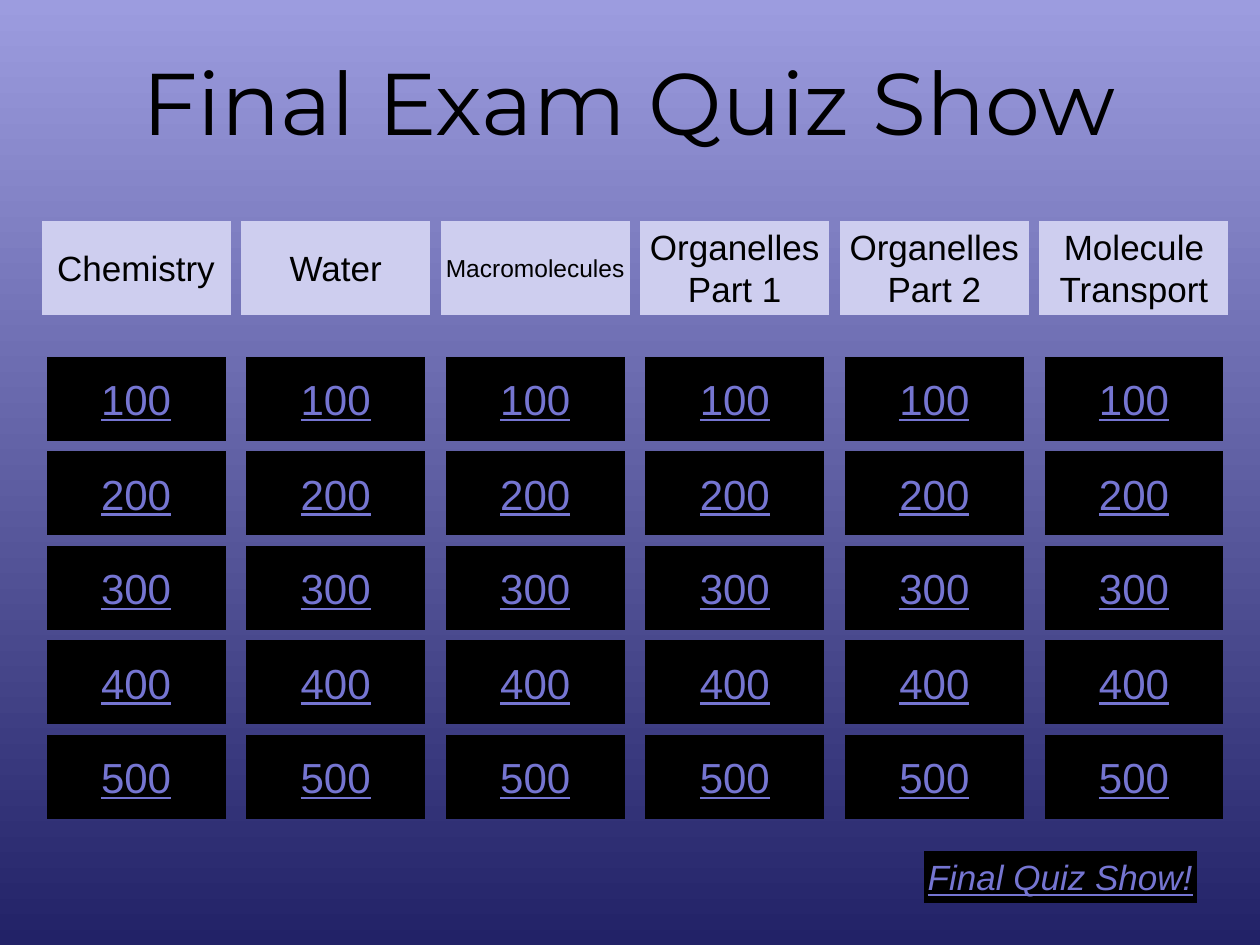
"""Build the quiz board slide with categories, point values and a final round."""
import pptx
import pptx.dml.color
import pptx.enum.shapes
import pptx.enum.text
import pptx.util
from pptx.util import Inches

TITLE = "Final Exam Quiz Show"
FINAL_ROUND = "Final Quiz Show!"
CATEGORIES = [
    "Chemistry",
    "Water",
    "Macromolecules",
    "Organelles\nPart 1",
    "Organelles\nPart 2",
    "Molecule\nTransport",
]
POINTS = [100, 200, 300, 400, 500]

THEME = {
    "title_font": "Montserrat",
    "body_font": "Arial",
    "gradient": ("9C9CDF", "222267"),
    "text": "000000",
    "link": "7575D1",
    "header_fill": "CECEEF",
    "tile_fill": "000000",
    "title_size": 50,
    "header_size": 20,
    "long_header_size": 14,
    "tile_size": 24,
    "final_size": 20,
}
LONGEST_LINE = 12

BOARD_LEFT, LAST_LEFT = 0.33, 8.25
COLUMN_PITCH = (LAST_LEFT - BOARD_LEFT) / (len(CATEGORIES) - 1)
HEADER_TOP, HEADER_WIDTH, HEADER_HEIGHT = 1.75, 1.5, 0.75
TILE_TOP, TILE_WIDTH, TILE_HEIGHT, ROW_PITCH = 2.83, 1.42, 0.67, 0.75
TILE_INDENT = (HEADER_WIDTH - TILE_WIDTH) / 2


def rgb(value):
    return pptx.dml.color.RGBColor.from_string(value)


def set_text(shape, text, font_name, size, color, underline=None, italic=None):
    frame = shape.text_frame
    frame.text = text
    frame.vertical_anchor = pptx.enum.text.MSO_ANCHOR.MIDDLE
    for paragraph in frame.paragraphs:
        paragraph.alignment = pptx.enum.text.PP_ALIGN.CENTER
        for run in paragraph.runs:
            run.font.name = font_name
            run.font.size = pptx.util.Pt(size)
            run.font.color.rgb = rgb(color)
            run.font.underline = underline
            run.font.italic = italic


def add_button(slide, box, fill, text, size, color, **style):
    shape = slide.shapes.add_shape(
        pptx.enum.shapes.MSO_SHAPE.ACTION_BUTTON_CUSTOM, *map(Inches, box)
    )
    shape.shadow.inherit = False
    shape.fill.solid()
    shape.fill.fore_color.rgb = rgb(fill)
    shape.line.fill.background()
    set_text(shape, text, THEME["body_font"], size, color, **style)
    shape.text_frame.word_wrap = False


def add_background(slide):
    fill = slide.background.fill
    fill.gradient()
    fill.gradient_angle = 270
    for stop, color in zip(fill.gradient_stops, THEME["gradient"]):
        stop.color.rgb = rgb(color)


def add_title(slide):
    title = slide.shapes.title
    title.left, title.top = Inches(0.33), Inches(0.17)
    title.width, title.height = Inches(9.33), Inches(1.25)
    set_text(title, TITLE, THEME["title_font"], THEME["title_size"], THEME["text"])


def add_column(slide, left, category):
    is_long = max(map(len, category.split("\n"))) > LONGEST_LINE
    size = THEME["long_header_size" if is_long else "header_size"]
    header_box = (left, HEADER_TOP, HEADER_WIDTH, HEADER_HEIGHT)
    add_button(slide, header_box, THEME["header_fill"], category, size, THEME["text"])
    for row, points in enumerate(POINTS):
        tile_box = (left + TILE_INDENT, TILE_TOP + row * ROW_PITCH, TILE_WIDTH, TILE_HEIGHT)
        add_button(slide, tile_box, THEME["tile_fill"], str(points),
                   THEME["tile_size"], THEME["link"], underline=True)


def main():
    presentation = pptx.Presentation()
    presentation.slide_width, presentation.slide_height = Inches(10), Inches(7.5)
    slide = presentation.slides.add_slide(presentation.slide_layouts[5])
    add_background(slide)
    add_title(slide)
    for column, category in enumerate(CATEGORIES):
        add_column(slide, BOARD_LEFT + column * COLUMN_PITCH, category)
    add_button(slide, (7.33, 6.75, 2.17, 0.42), THEME["tile_fill"], FINAL_ROUND,
               THEME["final_size"], THEME["link"], underline=True, italic=True)
    presentation.save("out.pptx")


if __name__ == "__main__":
    main()
